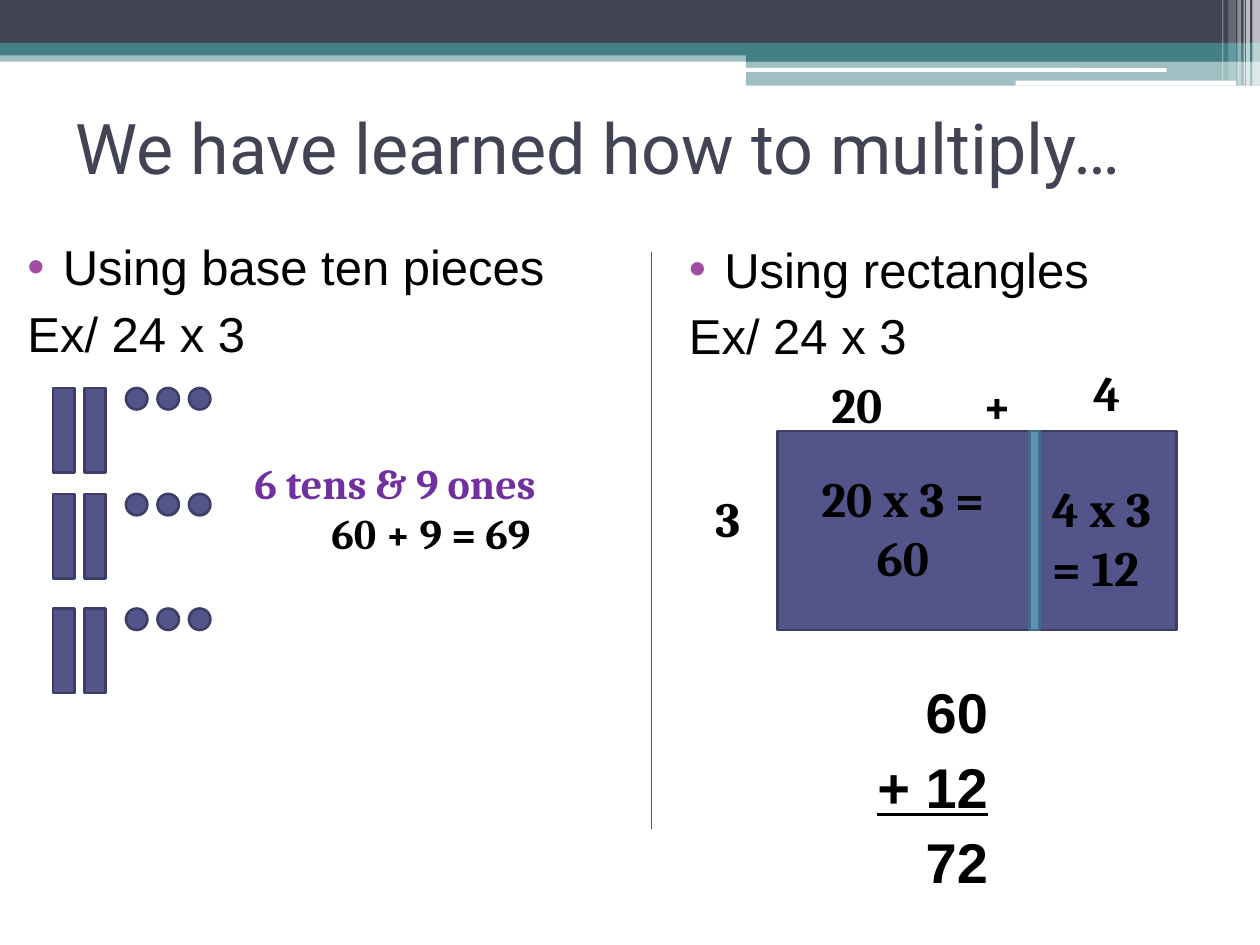
from pptx import Presentation
from pptx.util import Inches, Pt
from pptx.dml.color import RGBColor
from pptx.enum import shapes, text
from lxml import etree
from pptx.oxml.ns import qn

WHITE = RGBColor(0xFF, 0xFF, 0xFF)
BLACK = RGBColor(0, 0, 0)
SLATE = RGBColor(0x42, 0x44, 0x56)
TEAL = RGBColor(0x43, 0x80, 0x86)
INDIGO = RGBColor(0x53, 0x54, 0x8A)
INDIGO_EDGE = RGBColor(0x3D, 0x3E, 0x66)
BLUE = RGBColor(0x5C, 0x92, 0xB5)
BLUE_EDGE = RGBColor(0x44, 0x6C, 0x86)
PURPLE = RGBColor(0x70, 0x30, 0xA0)
RECT = shapes.MSO_SHAPE.RECTANGLE
ROUND = shapes.MSO_SHAPE.ROUNDED_RECTANGLE
OVAL = shapes.MSO_SHAPE.OVAL
LEFT, CENTER, RIGHT = (text.PP_ALIGN.LEFT, text.PP_ALIGN.CENTER,
                       text.PP_ALIGN.RIGHT)

# Content
TITLE = "We have learned how to multiply…"
COLUMNS = [  # left, top, bulleted heading, example
    (0, 1.83, "Using base ten pieces", "Ex/ 24 x 3"),
    (5.25, 1.85, "Using rectangles", "Ex/ 24 x 3"),
]
BANDS = [  # shape, left, top, width, height, colour, opacity %
    (RECT, 0, 0.4, 10, 0.09, TEAL, 50),
    (RECT, 0, 0, 10, 0.34, SLATE, 100),
    (RECT, 0, 0.34, 10, 0.1, TEAL, 100),
    (RECT, 5.92, 0.39, 4.08, 0.1, TEAL, 100),
    (RECT, 5.92, 0.48, 4.08, 0.2, TEAL, 50),
    (ROUND, 5.91, 0.54, 3.35, 0.03, WHITE, 100),
    (ROUND, 8.06, 0.64, 1.75, 0.04, WHITE, 100),
]
STRIPES = [  # left, width, height, opacity %
    (9.94, 0.06, 0.68, 65), (9.89, 0.03, 0.68, 65), (9.87, 0.01, 0.68, 60),
    (9.82, 0.03, 0.68, 40), (9.75, 0.06, 0.64, 20), (9.7, 0.01, 0.64, 30),
]
GROUP_TOPS = [3.08, 3.92, 4.83]
TENS, ONES = 2, 3
LABELS = [  # text, left, top, width, height, alignment
    ("3", 5.58, 3.83, 0.67, 0.57, LEFT),
    ("4", 8.58, 2.83, 0.67, 0.57, LEFT),
    ("20", 6.5, 2.92, 0.8, 0.57, LEFT),
    ("+", 7.7, 2.92, 0.6, 0.57, LEFT),
    ("20 x 3 = 60", 6.25, 3.67, 1.83, 1.04, CENTER),
    ("4 x 3 = 12", 8.25, 3.75, 1.25, 1.04, LEFT),
]
SUM = ["60", "+ 12", "72"]

prs = Presentation()
prs.slide_width, prs.slide_height = Inches(10), Inches(7.5)
s = prs.slides.add_slide(prs.slide_layouts[5])


def add_shape(kind, x, y, w, h, fill, edge=None, opacity=100):
    sp = s.shapes.add_shape(kind, Inches(x), Inches(y), Inches(w), Inches(h))
    sp.shadow.inherit = False
    sp.fill.solid()
    sp.fill.fore_color.rgb = fill
    if edge is None:
        sp.line.fill.background()
    else:
        sp.line.color.rgb = edge
        sp.line.width = Pt(1.5)
    if opacity < 100:
        color = sp._element.spPr.find(".//" + qn("a:srgbClr"))
        etree.SubElement(color, qn("a:alpha"), val=str(opacity * 1000))
    return sp


def style(p, size, font, color=BLACK, bold=False, align=LEFT):
    p.alignment = align
    for r in p.runs:
        r.font.size, r.font.name, r.font.bold = Pt(size), font, bold
        r.font.color.rgb = color


def add_text(lines, x, y, w, h):
    tf = s.shapes.add_textbox(Inches(x), Inches(y), Inches(w),
                              Inches(h)).text_frame
    tf.word_wrap = True
    tf.text = "\n".join(lines)
    return tf.paragraphs


def add_bullet(p):
    pPr = p._p.get_or_add_pPr()
    color = etree.SubElement(pPr, qn("a:buClr"))
    etree.SubElement(color, qn("a:srgbClr"), val="A04DA3")
    etree.SubElement(pPr, qn("a:buFont"), typeface="Arial")
    etree.SubElement(pPr, qn("a:buChar"), char="•")


# Header bands and corner stripes
for kind, x, y, w, h, color, opacity in BANDS:
    add_shape(kind, x, y, w, h, color, opacity=opacity)
for x, w, h, opacity in STRIPES:
    add_shape(RECT, x, 0, w, h, WHITE, opacity=opacity)

# Title
title = s.shapes.title
title.left, title.top = Inches(0.5), Inches(0.58)
title.width, title.height = Inches(9), Inches(1.17)
tf = title.text_frame
tf.text = TITLE
tf.auto_size = text.MSO_AUTO_SIZE.NONE
tf.vertical_anchor = text.MSO_ANCHOR.MIDDLE
style(tf.paragraphs[0], 40, "Roboto", SLATE)

# Column headings
for x, y, *lines in COLUMNS:
    paragraphs = add_text(lines, x, y, 4.67, 4.73)
    for p in paragraphs:
        style(p, 28, "Arial")
        p.space_before = Pt(4.4)
        pPr = p._p.get_or_add_pPr()
        pPr.set("marL", str(Inches(0.4)))
        pPr.set("indent", str(Inches(-0.28)))
    add_bullet(paragraphs[0])

# Column divider
divider = s.shapes.add_connector(shapes.MSO_CONNECTOR.STRAIGHT, Inches(5.17),
                                 Inches(2), Inches(5.17), Inches(6.58))
divider.line.color.rgb = INDIGO
divider.line.width = Pt(0.75)
etree.SubElement(divider._element.spPr, qn("a:effectLst"))

# Base ten pieces
for top in GROUP_TOPS:
    for i in range(TENS):
        add_shape(RECT, 0.42 + 0.25 * i, top, 0.17, 0.67, INDIGO, INDIGO_EDGE)
    for i in range(ONES):
        add_shape(OVAL, 1 + 0.25 * i, top, 0.17, 0.17, INDIGO, INDIGO_EDGE)
count, total = add_text(["6 tens & 9 ones", "60 + 9 = 69"],
                        1.92, 3.58, 3, 0.91)
style(count, 24, "Cambria", PURPLE, True)
style(total, 24, "Cambria", BLACK, True, CENTER)

# Area rectangle split into 20 and 4
add_shape(RECT, 6.17, 3.42, 3.17, 1.58, INDIGO, INDIGO_EDGE)
add_shape(RECT, 8.17, 3.42, 0.08, 1.58, BLUE, BLUE_EDGE)
for label, x, y, w, h, align in LABELS:
    style(add_text([label], x, y, w, h)[0], 28, "Cambria", BLACK, True, align)

# Column addition
sum_lines = add_text(SUM, 6.44, 5.33, 1.5, 1.8)
for p in sum_lines:
    style(p, 32, "Arial", BLACK, True, RIGHT)
    p.space_before = Pt(4.4)
sum_lines[1].runs[0].font.underline = True

prs.save("out.pptx")
